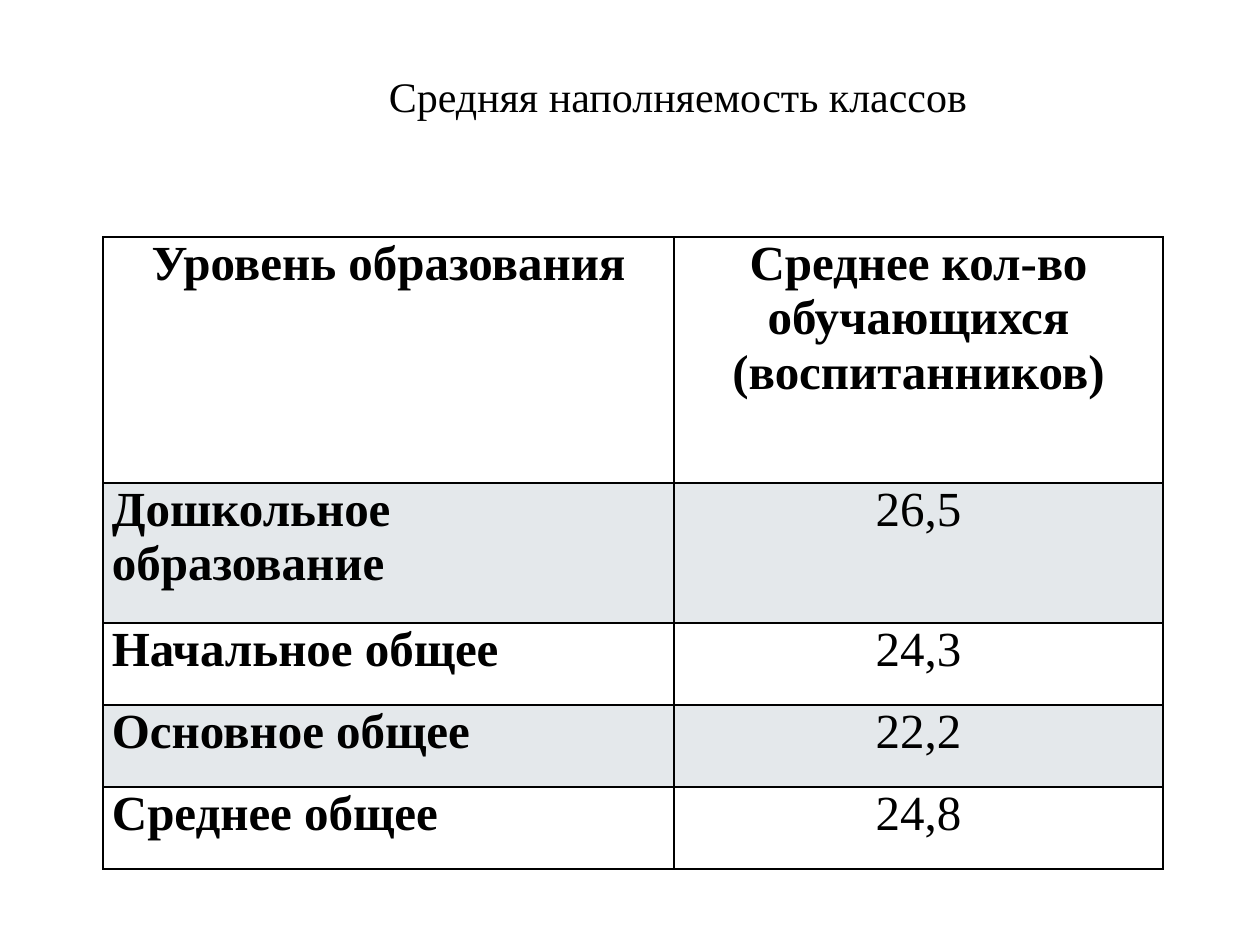
import pptx
import pptx.util
import pptx.dml.color
import pptx.enum.text
import pptx.oxml.ns
from lxml import etree

FONT = "Times New Roman"
BLACK = "000000"
BAND = "78909C"
ALIGN = pptx.enum.text.PP_ALIGN
ANCHOR = pptx.enum.text.MSO_ANCHOR
qn = pptx.oxml.ns.qn


def px(n):
    """Pixels at 126 to the inch, as EMU."""
    return pptx.util.Emu(round(n * 914400 / 126))


def rgb(value):
    return pptx.dml.color.RGBColor.from_string(value)


def write(tf, text, size=28, bold=False, color=BLACK, align=ALIGN.CENTER):
    p = tf.paragraphs[0]
    p.alignment = align
    r = p.add_run()
    r.text = text
    r.font.name = FONT
    r.font.size = pptx.util.Pt(size)
    r.font.bold = bold
    r.font.color.rgb = rgb(color)


def set_borders(cell, color=BLACK, width=1):
    tc_pr = cell._tc.get_or_add_tcPr()
    for side in ("a:lnL", "a:lnR", "a:lnT", "a:lnB"):
        ln = etree.SubElement(tc_pr, qn(side), w=str(pptx.util.Pt(width)))
        fill = etree.SubElement(ln, qn("a:solidFill"))
        etree.SubElement(fill, qn("a:srgbClr"), val=color)


def set_fill(cell, color=None, alpha=20):
    if color is None:
        cell.fill.background()
        return
    cell.fill.solid()
    cell.fill.fore_color.rgb = rgb(color)
    clr = cell._tc.tcPr.find(qn("a:solidFill")).find(qn("a:srgbClr"))
    etree.SubElement(clr, qn("a:alpha"), val=str(alpha * 1000))


def add_title(s, x, y, w, h, text):
    tf = s.shapes.add_textbox(px(x), px(y), px(w), px(h)).text_frame
    tf.word_wrap = True
    tf.vertical_anchor = ANCHOR.BOTTOM
    write(tf, text, size=24)


def add_class_table(s, x, y, cols, heights, rows):
    frame = s.shapes.add_table(len(rows), len(cols), px(x), px(y),
                               px(sum(cols)), px(sum(heights)))
    table = frame.table
    table.first_row = table.horz_banding = False
    for col, w in zip(table.columns, cols):
        col.width = px(w)
    for i, (h, values) in enumerate(zip(heights, rows)):
        table.rows[i].height = px(h)
        for j, text in enumerate(values):
            cell = table.cell(i, j)
            cell.margin_left = cell.margin_right = px(9)
            cell.margin_top = cell.margin_bottom = 0
            set_borders(cell)
            set_fill(cell, BAND if i % 2 else None)
            # Header row and level names are bold; level names are justified
            write(cell.text_frame, text, bold=i == 0 or j == 0,
                  align=ALIGN.JUSTIFY if i and j == 0 else ALIGN.CENTER)


def main():
    prs = pptx.Presentation()
    prs.slide_width, prs.slide_height = px(1260), px(945)
    s = prs.slides.add_slide(prs.slide_layouts[6])

    # Title
    add_title(s, 111, 58, 1134, 69, "Средняя наполняемость классов")

    # Average class size by level of education
    add_class_table(s, 103, 237, [571, 489], [246, 140, 82, 82, 82], [
        ("Уровень образования", "Среднее кол-во обучающихся (воспитанников)"),
        ("Дошкольное образование", "26,5"),
        ("Начальное общее ", "24,3"),
        ("Основное общее", "22,2"),
        ("Среднее общее", "24,8"),
    ])
    prs.save("out.pptx")


if __name__ == "__main__":
    main()
